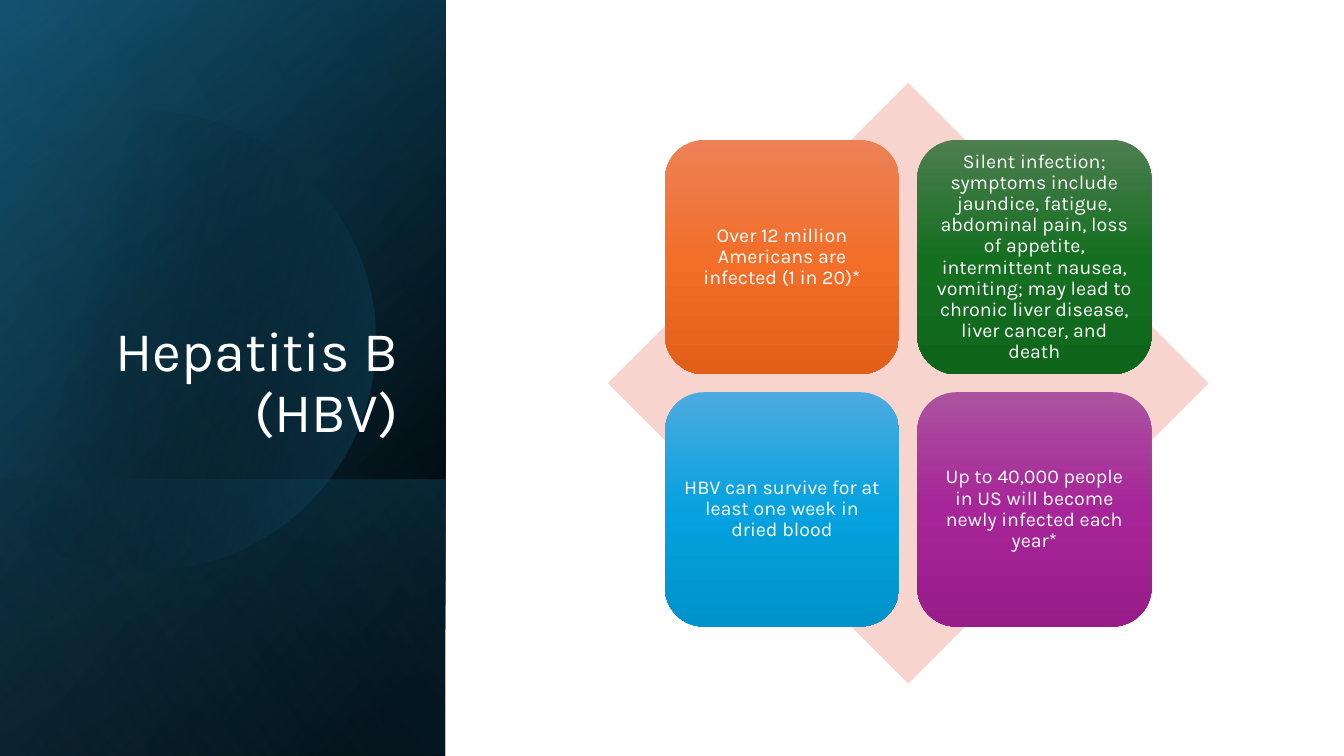
from dataclasses import dataclass
from math import acos, cos, pi, sin

from lxml.etree import SubElement
from pptx import Presentation
from pptx.dml.color import RGBColor
from pptx.enum.shapes import MSO_SHAPE as Preset
from pptx.enum.text import MSO_ANCHOR as Anchor, MSO_AUTO_SIZE as AutoSize, PP_ALIGN as Align
from pptx.oxml.ns import qn
from pptx.shapes.autoshape import Shape
from pptx.slide import Slide
from pptx.util import Pt

COLORS = {
    "white": "FFFFFF", "black": "000000", "navy": "104862", "teal": "156082",
    "sky": "46B1E1", "blush": "F7D5CE",
    "orange light": "ED8257", "orange": "F26E29", "orange dark": "E25F1A",
    "green light": "4D7E50", "green": "156F21", "green dark": "0F661B",
    "blue light": "4CAADF", "blue": "05A2DF", "blue dark": "0092CB",
    "purple light": "AC53A0", "purple": "A62598", "purple dark": "991C8B",
}
FONT = "Karla"
PAGE_WIDTH, PAGE_HEIGHT = 960, 540
PANEL_WIDTH = 318.24
DIAMOND_LEFT, DIAMOND_TOP, DIAMOND_SIZE = 434.2, 59.2, 429.1


@dataclass
class Stop:
    position: int
    color: str
    alpha: int = 100


@dataclass
class Band:
    """A gradient layer of the side panel, reaching down to the page's bottom."""
    top: float
    angle: float
    stops: list[Stop]


@dataclass
class Card:
    color: str
    text: str


BANDS_BELOW = [
    Band(0, 50, [Stop(8, "black"), Stop(100, "navy")]),
    Band(0, 30, [Stop(0, "black", 0), Stop(99, "teal", 46)]),
    Band(342.7, 130, [Stop(2, "teal", 29), Stop(100, "black", 30)]),
]
BAND_ABOVE = Band(0, 120, [Stop(0, "black", 0), Stop(99, "sky", 11)])
CARDS = [
    Card("orange", "Over 12 million Americans are infected (1 in 20)*"),
    Card("green", "Silent infection; symptoms include jaundice, fatigue, abdominal pain, "
                  "loss of appetite, intermittent nausea, vomiting; may lead to chronic "
                  "liver disease, liver cancer, and death"),
    Card("blue", "HBV can survive for at least one week in dried blood"),
    Card("purple", "Up to 40,000 people in US will become newly infected each year*"),
]


def make_plain(shape: Shape) -> None:
    shape.shadow.inherit = False
    shape.line.fill.background()


def fill_gradient(shape: Shape, stops: list[Stop], angle: float) -> None:
    """Give the shape a linear gradient, with opacity for each stop."""
    make_plain(shape)
    shape.fill.background()
    empty_fill = shape.element.spPr.find(qn("a:noFill"))
    gradient = SubElement(shape.element.spPr, qn("a:gradFill"), rotWithShape="1")
    stop_list = SubElement(gradient, qn("a:gsLst"))
    for stop in stops:
        entry = SubElement(stop_list, qn("a:gs"), pos=str(stop.position * 1000))
        color = SubElement(entry, qn("a:srgbClr"), val=COLORS[stop.color])
        if stop.alpha < 100:
            SubElement(color, qn("a:alpha"), val=str(stop.alpha * 1000))
    SubElement(gradient, qn("a:lin"), ang=str(round(angle * 60000)), scaled="0")
    shape.element.spPr.replace(empty_fill, gradient)


def write_text(shape: Shape, text: str, *, size: float, align: Align,
               anchor: Anchor, inset: tuple[float, float], color: str = "white") -> None:
    frame = shape.text_frame
    frame.word_wrap = True
    frame.auto_size = AutoSize.NONE
    frame.vertical_anchor = anchor
    frame.margin_left = frame.margin_right = Pt(inset[0])
    frame.margin_top = frame.margin_bottom = Pt(inset[1])
    para = frame.paragraphs[0]
    para.alignment = align
    para.line_spacing = 0.9
    span = para.add_run()
    span.text = text
    span.font.name = FONT
    span.font.size = Pt(size)
    span.font.color.rgb = RGBColor.from_string(COLORS[color])


def draw_band(page: Slide, band: Band) -> None:
    """Place a mirrored rectangle, turned a quarter, over the panel."""
    length = PAGE_HEIGHT - band.top
    left = (PANEL_WIDTH - length) / 2
    top = band.top + (length - PANEL_WIDTH) / 2
    box = page.shapes.add_shape(Preset.RECTANGLE, Pt(left), Pt(top), Pt(length), Pt(PANEL_WIDTH))
    box.rotation = 90
    box.element.spPr.find(qn("a:xfrm")).set("flipH", "1")
    fill_gradient(box, band.stops, band.angle)


def draw_disc(page: Slide) -> None:
    """Draw a disc that is cut straight along its left side."""
    center_x, center_y, radius, cut_x, steps = 103.7, 243.2, 164.5, -10.8, 120
    half_arc = acos((cut_x - center_x) / radius)
    angles = [half_arc * (2 * step / steps - 1) for step in range(steps + 1)]
    points = [(Pt(center_x + radius * cos(angle)), Pt(center_y + radius * sin(angle)))
              for angle in angles]
    builder = page.shapes.build_freeform(*points[0])
    builder.add_line_segments(points[1:], close=True)
    disc = builder.convert_to_shape()
    fill_gradient(disc, [Stop(29, "black", 0), Stop(100, "teal", 43)], 14)


def draw_title(page: Slide) -> None:
    title = page.shapes.title
    title.left, title.top, title.width, title.height = Pt(46), Pt(132.5), Pt(245.5), Pt(188.6)
    write_text(title, "Hepatitis B (HBV)", size=40, align=Align.RIGHT,
               anchor=Anchor.BOTTOM, inset=(7.2, 3.6))
    # Bring the title in front of the panel
    page.shapes.element.append(title.element)


def draw_matrix(page: Slide) -> None:
    """Draw the diamond and the two-by-two cards, all sized from the diamond."""
    diamond = page.shapes.add_shape(Preset.DIAMOND, Pt(DIAMOND_LEFT), Pt(DIAMOND_TOP),
                                    Pt(DIAMOND_SIZE), Pt(DIAMOND_SIZE))
    make_plain(diamond)
    diamond.fill.solid()
    diamond.fill.fore_color.rgb = RGBColor.from_string(COLORS["blush"])

    size, margin, pitch = (DIAMOND_SIZE * share for share in (0.39, 0.095, 0.42))
    for index, card in enumerate(CARDS):
        row, column = divmod(index, 2)
        box = page.shapes.add_shape(
            Preset.ROUNDED_RECTANGLE,
            Pt(DIAMOND_LEFT + margin + column * pitch),
            Pt(DIAMOND_TOP + margin + row * pitch), Pt(size), Pt(size))
        fill_gradient(box, [Stop(0, f"{card.color} light"), Stop(50, card.color),
                            Stop(100, f"{card.color} dark")], 90)
        write_text(box, card.text, size=14, align=Align.CENTER,
                   anchor=Anchor.MIDDLE, inset=(4.2, 4.2))


def main() -> None:
    deck = Presentation()
    deck.slide_width, deck.slide_height = Pt(PAGE_WIDTH), Pt(PAGE_HEIGHT)
    page = deck.slides.add_slide(deck.slide_layouts[5])

    # Side panel
    for band in BANDS_BELOW:
        draw_band(page, band)
    draw_disc(page)
    draw_band(page, BAND_ABOVE)
    draw_title(page)

    # Facts
    draw_matrix(page)
    deck.save("out.pptx")


if __name__ == "__main__":
    main()
